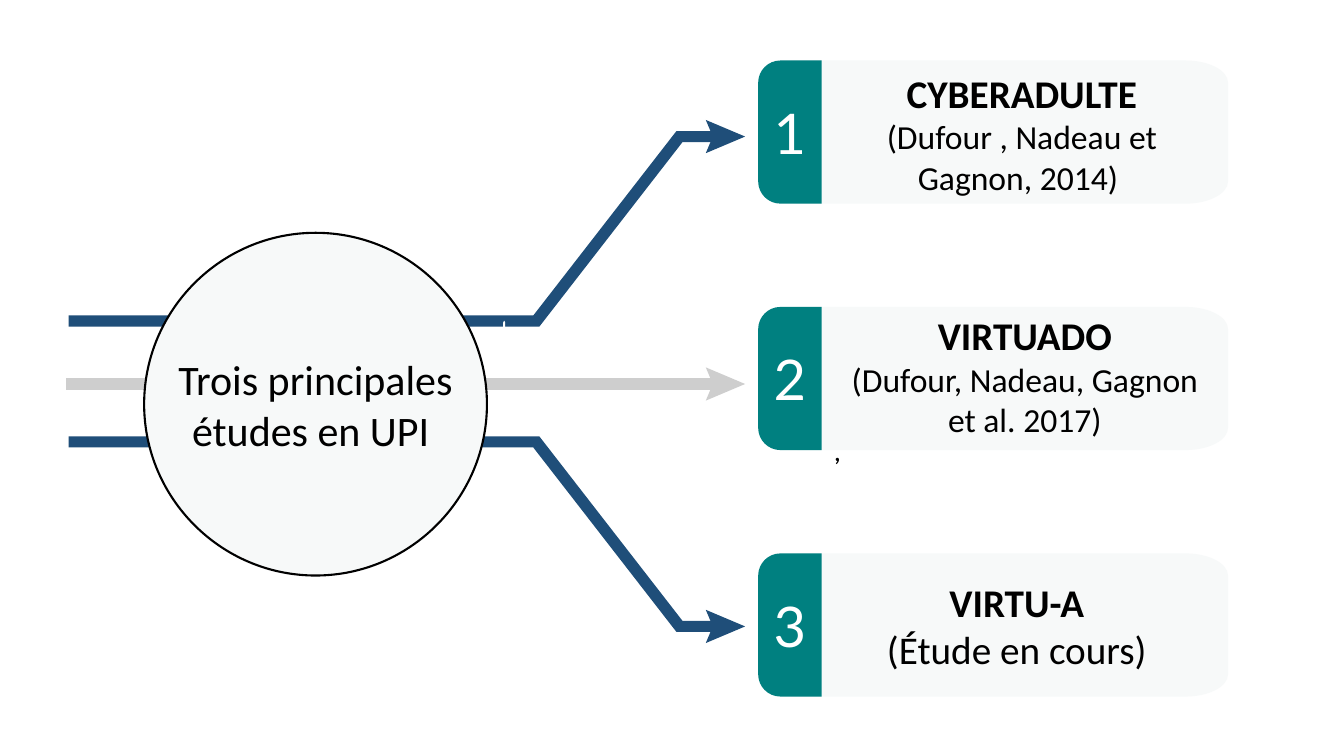
from dataclasses import dataclass

from lxml.etree import SubElement
from pptx import Presentation
from pptx.dml.color import RGBColor
from pptx.enum.text import MSO_ANCHOR, PP_ALIGN
from pptx.oxml.ns import qn
from pptx.shapes.base import BaseShape
from pptx.slide import Slide
from pptx.util import Inches, Pt

NAVY = RGBColor(0x1F, 0x4E, 0x79)
GREY = RGBColor(0xCE, 0xCE, 0xCE)
TEAL = RGBColor(0x00, 0x80, 0x80)
PALE = RGBColor(0xF7, 0xF9, 0xF9)
BLACK = RGBColor(0x00, 0x00, 0x00)
WHITE = RGBColor(0xFF, 0xFF, 0xFF)

Point = tuple[float, float]
Segment = list[Point]

CARD_LEFT, CARD_TOP, CARD_PITCH = 7.52, 0.6, 2.445
CARD_WIDTH, CARD_HEIGHT, TAB_WIDTH = 4.66, 1.42, 0.63
CORNER_HEIGHT, TAB_CORNER, PANEL_CORNER = 0.22, 0.22, 0.42
HEAD_LEFT, HEAD_NOTCH, HEAD_TIP, HEAD_HALF = 7.0, 7.07, 7.39, 0.165
MIRROR_SUM = 7.57
CURVE_PULL = 0.55


@dataclass(frozen=True)
class Route:
    band: list[Point]
    head_y: float
    color: RGBColor


@dataclass(frozen=True)
class Study:
    title: str
    reference: str
    reference_size: int
    left: float
    top: float
    width: float
    height: float
    footnote: str = ""


UPPER_BAND: list[Point] = [
    (6.71, 1.3), (5.29, 3.13), (0.68, 3.13), (0.68, 3.24),
    (5.35, 3.24), (6.77, 1.41), (7.12, 1.41), (7.12, 1.3),
]
LOWER_BAND: list[Point] = [(x, MIRROR_SUM - y) for x, y in UPPER_BAND]
MIDDLE_BAND: list[Point] = [(0.66, 3.75), (0.66, 3.87), (7.12, 3.87), (7.12, 3.75)]

ROUTES = [
    Route(MIDDLE_BAND, 3.81, GREY),
    Route(UPPER_BAND, 1.355, NAVY),
    Route(LOWER_BAND, MIRROR_SUM - 1.355, NAVY),
]

STUDIES = [
    Study("CYBERADULTE", "(Dufour , Nadeau et Gagnon, 2014) ", 24, 8.2, 0.62, 3.87, 1.4),
    Study("VIRTUADO", "(Dufour, Nadeau, Gagnon et al. 2017)", 24, 8.15, 3.16, 4.03, 1.4, ","),
    Study("VIRTU-A", "(Étude en cours)", 28, 8.15, 5.49, 3.87, 1.42),
]


def add_outline(slide: Slide, segments: list[Segment], color: RGBColor) -> BaseShape:
    points = [(Inches(x), Inches(y)) for segment in segments for x, y in segment]
    builder = slide.shapes.build_freeform(*points[0])
    builder.add_line_segments(points[1:], close=True)
    shape = builder.convert_to_shape()
    lines = iter(list(shape.element.iter(qn("a:lnTo"))))
    for segment in segments[1:]:
        pieces = [next(lines) for _ in segment]
        if len(pieces) == 3:
            outline = pieces[0].getparent()
            curve = SubElement(outline, qn("a:cubicBezTo"))
            pieces[0].addprevious(curve)
            for piece in pieces:
                curve.append(piece[0])
                outline.remove(piece)
    shape.shadow.inherit = False
    shape.fill.solid()
    shape.fill.fore_color.rgb = color
    shape.line.fill.background()
    return shape


def add_polygon(slide: Slide, points: list[Point], color: RGBColor) -> BaseShape:
    return add_outline(slide, [[point] for point in points], color)


def rounded_segments(left: float, top: float, width: float, height: float,
                     left_radius: float, right_radius: float, radius_y: float) -> list[Segment]:
    right, bottom = left + width, top + height
    corners = [
        (left, top, left_radius, 1, 1, True),
        (left, bottom, left_radius, 1, -1, False),
        (right, bottom, right_radius, -1, -1, True),
        (right, top, right_radius, -1, 1, False),
    ]
    segments: list[Segment] = []
    for x, y, radius_x, inward_x, inward_y, starts_across in corners:
        if radius_x == 0:
            segments.append([(x, y)])
            continue
        across, down = inward_x * radius_x, inward_y * radius_y
        curve = [
            (x + across, y),
            (x + across * (1 - CURVE_PULL), y),
            (x, y + down * (1 - CURVE_PULL)),
            (x, y + down),
        ]
        if not starts_across:
            curve.reverse()
        if not segments or segments[-1][-1] != curve[0]:
            segments.append(curve[:1])
        segments.append(curve[1:])
    return segments


def write_text(shape: BaseShape, text: str, *, size: int, font: str = "Calibri",
               color: RGBColor = BLACK, bold: bool = False,
               align: PP_ALIGN = PP_ALIGN.CENTER) -> None:
    frame = shape.text_frame
    frame.word_wrap = True
    frame.vertical_anchor = MSO_ANCHOR.MIDDLE
    frame.margin_left = frame.margin_right = Inches(0.13)
    frame.margin_top = frame.margin_bottom = Inches(0.13)
    paragraph = frame.add_paragraph() if frame.text else frame.paragraphs[0]
    paragraph.alignment = align
    run = paragraph.add_run()
    run.text = text
    run.font.size = Pt(size)
    run.font.name = font
    run.font.bold = bold
    run.font.color.rgb = color


def add_route(slide: Slide, route: Route) -> None:
    add_polygon(slide, route.band, route.color)
    head = [
        (HEAD_LEFT, route.head_y - HEAD_HALF), (HEAD_NOTCH, route.head_y),
        (HEAD_LEFT, route.head_y + HEAD_HALF), (HEAD_TIP, route.head_y),
    ]
    add_polygon(slide, head, route.color)


def add_hub(slide: Slide) -> None:
    radius = 1.7
    circle = rounded_segments(1.43, 2.31, 2 * radius, 2 * radius, radius, radius, radius)
    hub = add_outline(slide, circle, PALE)
    hub.line.color.rgb = BLACK
    hub.line.width = Pt(1.5)
    write_text(hub, "Trois principales études en UPI ", size=30)


def add_study(slide: Slide, number: int, study: Study) -> None:
    top = CARD_TOP + (number - 1) * CARD_PITCH
    add_outline(slide, rounded_segments(CARD_LEFT, top, CARD_WIDTH, CARD_HEIGHT,
                                        PANEL_CORNER, PANEL_CORNER, CORNER_HEIGHT), PALE)
    tab = add_outline(slide, rounded_segments(CARD_LEFT, top, TAB_WIDTH, CARD_HEIGHT,
                                              TAB_CORNER, 0, CORNER_HEIGHT), TEAL)
    write_text(tab, str(number), size=40, font="Lato", color=WHITE)
    caption = slide.shapes.add_textbox(Inches(study.left), Inches(study.top),
                                       Inches(study.width), Inches(study.height))
    write_text(caption, study.title, size=28, bold=True)
    write_text(caption, study.reference, size=study.reference_size)
    if study.footnote:
        write_text(caption, study.footnote, size=16, font="Lato", bold=True,
                   align=PP_ALIGN.LEFT)


def main() -> None:
    presentation = Presentation()
    presentation.slide_width = Inches(13.33)
    presentation.slide_height = Inches(7.5)
    slide = presentation.slides.add_slide(presentation.slide_layouts[6])
    for route in ROUTES:
        add_route(slide, route)
    add_hub(slide)
    for number, study in enumerate(STUDIES, start=1):
        add_study(slide, number, study)
    add_outline(slide, rounded_segments(4.99, 3.18, 0.02, 0.15, 0.01, 0.01, 0.02), WHITE)
    presentation.save("out.pptx")


if __name__ == "__main__":
    main()
